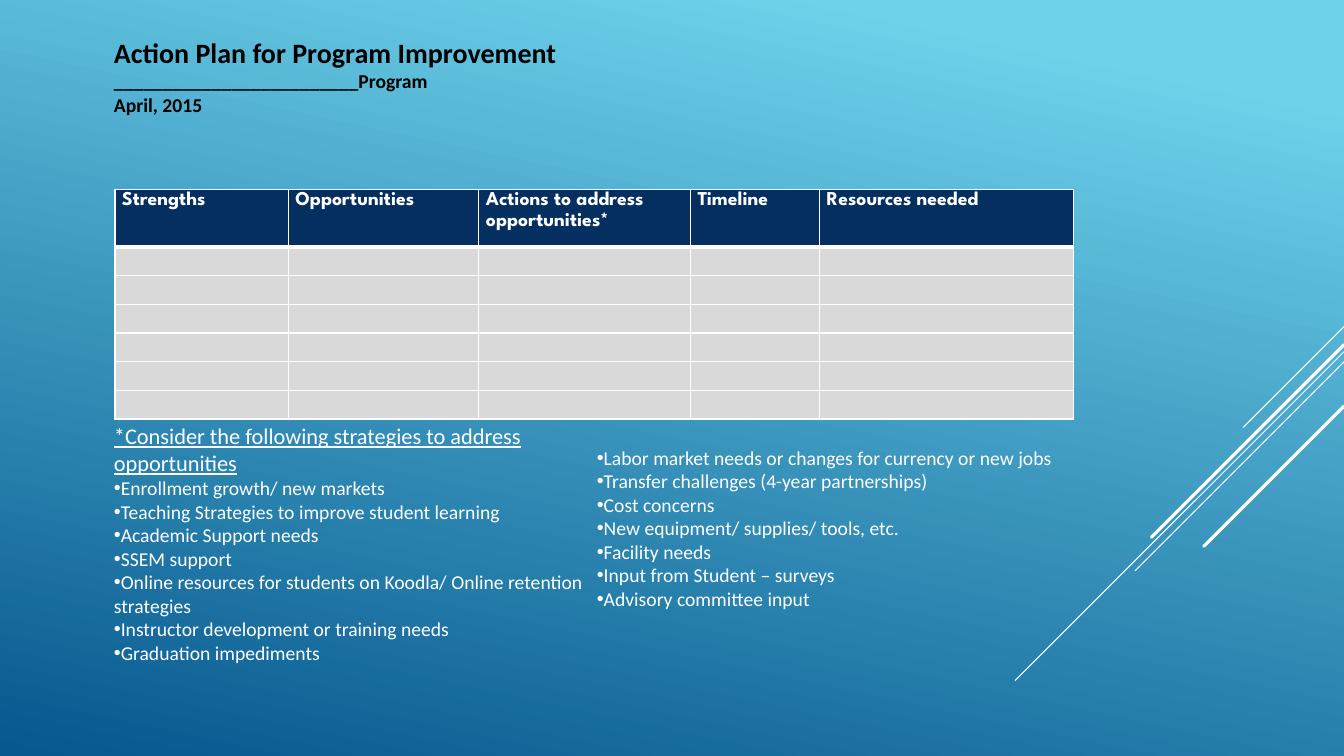
from lxml.etree import SubElement
from pptx import Presentation
from pptx.dml.color import RGBColor
from pptx.enum.shapes import MSO_CONNECTOR
from pptx.enum.text import MSO_ANCHOR, MSO_AUTO_SIZE, PP_ALIGN
from pptx.oxml.ns import qn
from pptx.util import Inches, Pt

WIDTH, HEIGHT = 13.33, 7.5
LEFT = 1.13
COLUMN = 4.79
WHITE, BLACK, NAVY, GREY = "FFFFFF", "000000", "052F61", "D9D9D9"

TITLE = [("Action Plan for Program Improvement", 20),
         ("_________________________Program", 14),
         ("April, 2015", 14)]
HEADERS = ["Strengths", "Opportunities", "Actions to address opportunities*",
           "Timeline", "Resources needed"]
COLUMN_WIDTHS = [1.72, 1.89, 2.1, 1.28, 2.52]
EMPTY_ROWS = 6
STRATEGIES_HEADING = "*Consider the following strategies to address opportunities"
STRATEGIES_LEFT = ["Enrollment growth/ new markets",
                   "Teaching Strategies to improve student learning",
                   "Academic Support needs",
                   "SSEM support",
                   "Online resources for students on Koodla/ Online retention strategies",
                   "Instructor development or training needs",
                   "Graduation impediments"]
STRATEGIES_RIGHT = ["Labor market needs or changes for currency or new jobs",
                    "Transfer challenges (4-year partnerships)",
                    "Cost concerns",
                    "New equipment/ supplies/ tools, etc.",
                    "Facility needs",
                    "Input from Student – surveys",
                    "Advisory committee input"]
# Height on the right edge, horizontal run, line width
DIAGONALS = [(3.24, 1, 0.75), (3.49, 3.26, 0.75), (3.59, 2.07, 0.75),
             (3.42, 1.91, 2.25), (4.03, 1.39, 2.25)]


def color(value):
    return RGBColor.from_string(value)


def write(frame, text, size, ink=WHITE, font="Calibri", bold=False,
          underline=False, bullet=False):
    """Add a paragraph, using the empty first one if there is one."""
    para = frame.paragraphs[0]
    if para.runs:
        para = frame.add_paragraph()
    para.alignment = PP_ALIGN.LEFT
    span = para.add_run()
    span.text = text
    span.font.size = Pt(size)
    span.font.name = font
    span.font.bold = bold
    span.font.underline = underline
    span.font.color.rgb = color(ink)
    if bullet:
        properties = para._p.get_or_add_pPr()
        properties.set("marL", "0")
        properties.set("indent", "0")
        SubElement(properties, qn("a:buFont"), typeface="Arial")
        SubElement(properties, qn("a:buChar"), char="•")
    return para


def prepare_frame(frame):
    frame.word_wrap = True
    frame.auto_size = MSO_AUTO_SIZE.NONE
    frame.vertical_anchor = MSO_ANCHOR.TOP
    frame.margin_left = frame.margin_right = 0
    frame.margin_top = frame.margin_bottom = 0


def paint_background(page):
    fill = page.background.fill
    fill.gradient()
    fill.gradient_angle = 360 - 102
    for stop, (position, value) in zip(fill.gradient_stops,
                                       [(0.1, "6ED2EB"), (1, "06588E")]):
        stop.position = position
        stop.color.rgb = color(value)


def draw_diagonals(page, right):
    for top, run, weight in DIAGONALS:
        line = page.shapes.add_connector(
            MSO_CONNECTOR.STRAIGHT, Inches(right), Inches(top),
            Inches(right - run), Inches(top + run))
        line.line.color.rgb = color(WHITE)
        line.line.width = Pt(weight)
        line.line._ln.set("cap", "rnd")
        SubElement(line._element.spPr, qn("a:effectLst"))


def place_title(page, left, top, width, height):
    title = page.shapes.title
    title.left, title.top = Inches(left), Inches(top)
    title.width, title.height = Inches(width), Inches(height)
    prepare_frame(title.text_frame)
    for text, size in TITLE:
        write(title.text_frame, text, size, ink=BLACK, bold=True)


def set_borders(cell, **weights):
    properties = cell._tc.get_or_add_tcPr()
    for index, side in enumerate(("lnL", "lnR", "lnT", "lnB")):
        border = properties.makeelement(
            qn(f"a:{side}"), {"w": str(Pt(weights.get(side, 1)))})
        fill = SubElement(border, qn("a:solidFill"))
        SubElement(fill, qn("a:srgbClr"), val=WHITE)
        properties.insert(index, border)


def place_table(page, left, top, header_height, row_height):
    rows = 1 + EMPTY_ROWS
    heights = [header_height] + [row_height] * EMPTY_ROWS
    table = page.shapes.add_table(
        rows, len(HEADERS), Inches(left), Inches(top),
        Inches(sum(COLUMN_WIDTHS)), Inches(sum(heights))).table
    for column, width in zip(table.columns, COLUMN_WIDTHS):
        column.width = Inches(width)
    for row, height in zip(table.rows, heights):
        row.height = Inches(height)
    for cell in table.iter_cells():
        cell.margin_left = cell.margin_right = Inches(0.07)
        cell.margin_top = cell.margin_bottom = 0
        cell.fill.solid()
        cell.fill.fore_color.rgb = color(GREY)
    for cell, header in zip(table.rows[0].cells, HEADERS):
        cell.fill.fore_color.rgb = color(NAVY)
        para = write(cell.text_frame, header, 14, font="League Spartan", bold=True)
        para.line_spacing = 1.15
        set_borders(cell, lnB=3)
    for number in range(1, rows):
        for cell in table.rows[number].cells:
            # A small size keeps the empty rows at their set height
            SubElement(cell.text_frame.paragraphs[0]._p,
                       qn("a:endParaRPr"), sz="1200")
            set_borders(cell, lnT=3 if number == 1 else 1)


def place_strategies(page, left, top, width, height, items, heading=None):
    box = page.shapes.add_textbox(Inches(left), Inches(top),
                                  Inches(width), Inches(height))
    prepare_frame(box.text_frame)
    if heading:
        write(box.text_frame, heading, 16, underline=True)
    for item in items:
        write(box.text_frame, item, 14, bullet=True)


def main():
    deck = Presentation()
    deck.slide_width, deck.slide_height = Inches(WIDTH), Inches(HEIGHT)
    page = deck.slides.add_slide(deck.slide_layouts[5])
    paint_background(page)
    draw_diagonals(page, WIDTH)
    place_title(page, LEFT, 0.35, 2 * COLUMN, 0.85)
    place_table(page, 1.14, 1.88, 0.57, 0.285)
    place_strategies(page, LEFT, 4.19, COLUMN, 2.45, STRATEGIES_LEFT,
                     STRATEGIES_HEADING)
    place_strategies(page, LEFT + COLUMN, 4.42, COLUMN, 1.7, STRATEGIES_RIGHT)
    deck.save("out.pptx")


if __name__ == "__main__":
    main()
